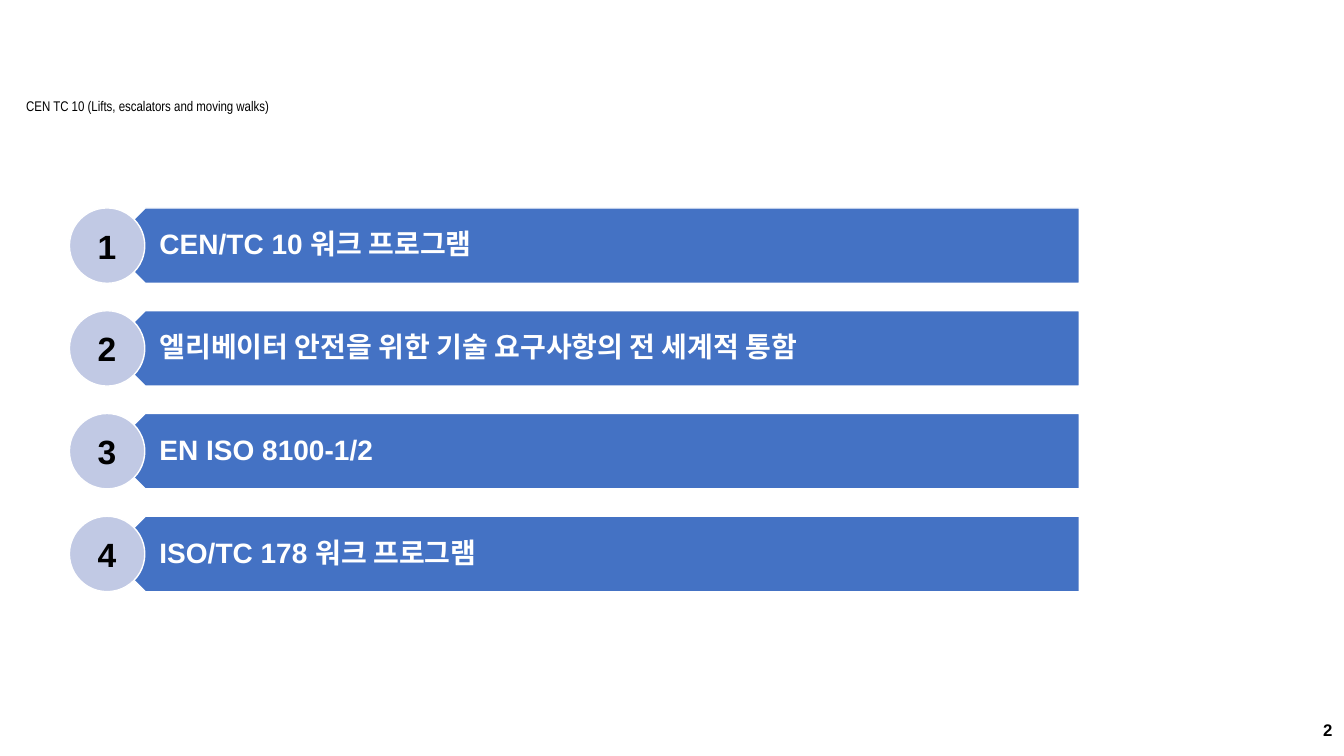
"""Build the agenda slide for CEN TC 10."""
from pptx import Presentation
from pptx.dml.color import RGBColor
from pptx.enum.shapes import MSO_SHAPE
from pptx.enum.text import MSO_ANCHOR, PP_ALIGN
from pptx.util import Cm, Pt

PENTAGON, OVAL = MSO_SHAPE.PENTAGON, MSO_SHAPE.OVAL
TOP, MIDDLE = MSO_ANCHOR.TOP, MSO_ANCHOR.MIDDLE
LEFT, CENTER, RIGHT = PP_ALIGN.LEFT, PP_ALIGN.CENTER, PP_ALIGN.RIGHT

TITLE = "CEN TC 10 (Lifts, escalators and moving walks)"
PAGE_NUMBER = "2"
TOPICS = [
    "CEN/TC 10 워크 프로그램",
    "엘리베이터 안전을 위한 기술 요구사항의 전 세계적 통함",
    "EN ISO 8100-1/2",
    "ISO/TC 178 워크 프로그램",
]

BLUE, LILAC, WHITE, BLACK = "4472C4", "C1C9E4", "FFFFFF", "000000"
FIRST_TOP, PITCH, ROW_HEIGHT = 5.24, 2.59, 1.9
CIRCLE_LEFT, BAR_LEFT, LABEL_LEFT, BAR_RIGHT = 1.75, 2.71, 3.3, 27.2


def color(value):
    return RGBColor.from_string(value)


def write(box, text, size, ink, align=LEFT, anchor=MIDDLE, bold=True,
          name="Arial", spacing=1.0, inset=0, wrap=True):
    frame = box.text_frame
    frame.word_wrap = wrap
    frame.vertical_anchor = anchor
    frame.margin_left = Cm(inset)
    frame.margin_top = frame.margin_right = frame.margin_bottom = 0
    para = frame.paragraphs[0]
    para.text = text
    para.alignment = align
    para.line_spacing = spacing
    para.space_before = Pt(0)
    font = para.font
    font.name, font.size, font.bold = name, Pt(size), bold
    font.color.rgb = color(ink)


def add_shape(page, kind, left, top, width, fill):
    shape = page.shapes.add_shape(kind, Cm(left), Cm(top), Cm(width), Cm(ROW_HEIGHT))
    shape.shadow.inherit = False
    shape.fill.solid()
    shape.fill.fore_color.rgb = color(fill)
    shape.line.color.rgb = color(WHITE)
    shape.line.width = Pt(1)
    return shape


def add_topic(page, number, topic):
    top = FIRST_TOP + (number - 1) * PITCH
    bar = add_shape(page, PENTAGON, BAR_LEFT, top, BAR_RIGHT - BAR_LEFT, BLUE)
    bar.rotation = 180
    label = page.shapes.add_textbox(
        Cm(LABEL_LEFT), Cm(top), Cm(BAR_RIGHT - LABEL_LEFT), Cm(ROW_HEIGHT))
    write(label, topic, 20, WHITE, spacing=0.9, inset=0.72)
    circle = add_shape(page, OVAL, CIRCLE_LEFT, top, ROW_HEIGHT, LILAC)
    write(circle, str(number), 24, BLACK, align=CENTER)


def main():
    deck = Presentation()
    deck.slide_width, deck.slide_height = Cm(33.87), Cm(19.05)
    page = deck.slides.add_slide(deck.slide_layouts[5])

    title = page.shapes.title
    title.left, title.top, title.width, title.height = Cm(0.66), Cm(2.56), Cm(6.2), Cm(0.33)
    write(title, TITLE, 10, BLACK, anchor=TOP, bold=False,
          name="Arial Narrow", spacing=0.75, wrap=False)

    for number, topic in enumerate(TOPICS, 1):
        add_topic(page, number, topic)

    footer = page.shapes.add_textbox(Cm(32.08), Cm(18.14), Cm(1.5), Cm(0.5))
    write(footer, PAGE_NUMBER, 12, BLACK, align=RIGHT, anchor=TOP)
    deck.save("out.pptx")


if __name__ == "__main__":
    main()
